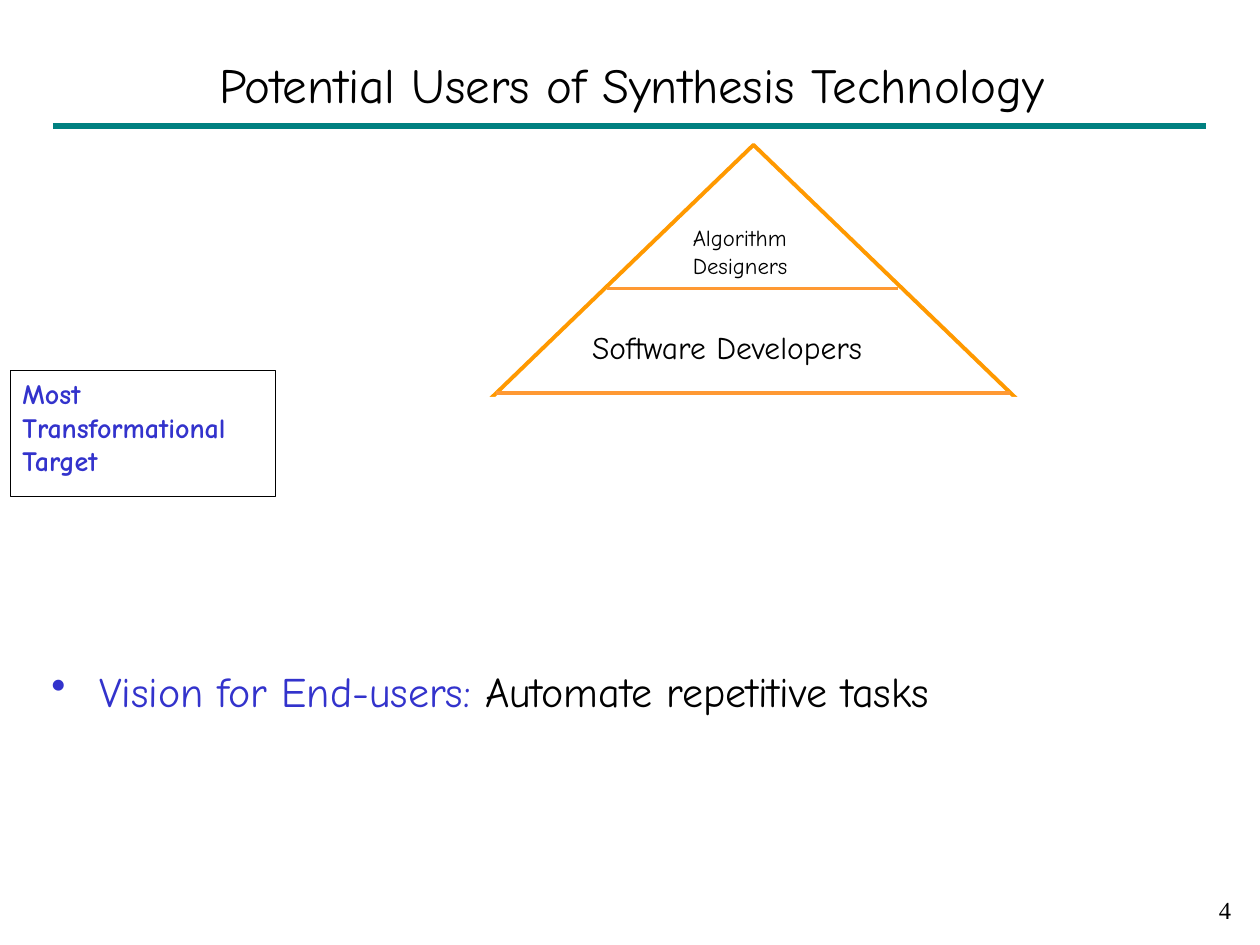
import pptx
import pptx.util
import pptx.dml.color
import pptx.enum.shapes
import pptx.enum.text
import pptx.oxml.ns
import lxml.etree

Inches, Pt = pptx.util.Inches, pptx.util.Pt
RGB = pptx.dml.color.RGBColor
Kind = pptx.enum.shapes.MSO_SHAPE
Align = pptx.enum.text.PP_ALIGN
Anchor = pptx.enum.text.MSO_ANCHOR

BLACK, WHITE = RGB(0, 0, 0), RGB(255, 255, 255)
BLUE, TEAL = RGB(0x33, 0x33, 0xCC), RGB(0, 0x80, 0x80)
AMBER, ORANGE = RGB(0xFF, 0x99, 0), RGB(0xFF, 0x99, 0x33)
FONT, SERIF = "Comic Neue", "Times New Roman"

TITLE = "Potential Users of Synthesis Technology"
VISION = [("Vision for End-users: ", BLUE), ("Automate repetitive tasks", BLACK)]
# box, border, paragraphs, size, colour, bold
LABELS = [
    ((5.4, 1.73, 1.04, 0.65), WHITE, ["Algorithm", "Designers"], 13, BLACK, False),
    ((4.6, 2.51, 2.72, 0.62), WHITE, ["Software Developers"], 18, BLACK, False),
    ((0.08, 2.94, 2.11, 1), BLACK, ["Most Transformational Target"], 16, BLUE, True),
]
# left, right, height, colour, width
RULES = [
    (0.42, 9.57, 1, TEAL, 4),
    (4.82, 7.13, 2.29, ORANGE, 2.25),
    (3.94, 8.02, 3.12, ORANGE, 2.25),
]
PYRAMID = (2.27, 1.15, 7.42, 3.58)
COVERS = [(1.94, 3.97, 7.84, 1.19), (2.2, 3.15, 7.8, 1.19)]


def add_run(para, text, size, color, font=FONT, bold=False):
    run = para.add_run()
    run.text = text
    run.font.size, run.font.name, run.font.bold = Pt(size), font, bold
    run.font.color.rgb = color


def add_block(slide, kind, box, border=None, width=0.5):
    shape = slide.shapes.add_shape(kind, *map(Inches, box))
    shape.shadow.inherit = False
    shape.fill.solid()
    shape.fill.fore_color.rgb = WHITE
    if border is None:
        shape.line.fill.background()
    else:
        shape.line.color.rgb = border
        shape.line.width = Pt(width)
    return shape


def add_label(slide, box, border, lines, size, color, bold):
    frame = add_block(slide, Kind.RECTANGLE, box, border).text_frame
    frame.word_wrap = True
    frame.vertical_anchor = Anchor.TOP
    for i, line in enumerate(lines):
        para = frame.add_paragraph() if i else frame.paragraphs[0]
        para.alignment = Align.LEFT
        add_run(para, line, size, color, bold=bold)
    return frame


def add_rule(slide, left, right, y, color, width):
    rule = slide.shapes.add_connector(
        pptx.enum.shapes.MSO_CONNECTOR.STRAIGHT,
        Inches(left), Inches(y), Inches(right), Inches(y))
    rule.line.color.rgb = color
    rule.line.width = Pt(width)
    props = rule._element.spPr
    lxml.etree.SubElement(props, pptx.oxml.ns.qn("a:effectLst"))


def add_text(slide, box):
    frame = slide.shapes.add_textbox(*map(Inches, box)).text_frame
    frame.word_wrap = True
    return frame.paragraphs[0]


def add_bullet(para, indent):
    props = para._p.get_or_add_pPr()
    props.set("marL", str(Inches(indent)))
    props.set("indent", str(-Inches(indent)))
    mark = lxml.etree.SubElement(props, pptx.oxml.ns.qn("a:buChar"))
    mark.set("char", "•")


def main():
    deck = pptx.Presentation()
    deck.slide_width, deck.slide_height = Inches(10), Inches(7.5)
    slide = deck.slides.add_slide(deck.slide_layouts[5])

    title = slide.shapes.title
    title.left, title.top, title.width, title.height = map(
        Inches, (0.39, 0.33, 9.25, 0.67))
    title.text_frame.vertical_anchor = Anchor.MIDDLE
    para = title.text_frame.paragraphs[0]
    para.alignment = Align.CENTER
    add_run(para, TITLE, 28, BLACK)

    add_block(slide, Kind.ISOSCELES_TRIANGLE, PYRAMID, AMBER, 2.25)
    frames = [add_label(slide, *label) for label in LABELS]
    frames[1].paragraphs[0].line_spacing = 1.15
    frames[1].paragraphs[0].space_after = Pt(10)
    for rule in RULES:
        add_rule(slide, *rule)

    number = add_text(slide, (7.79, 7.05, 2.08, 0.42))
    number.alignment = Align.RIGHT
    add_run(number, "4", 14, BLACK, SERIF)

    vision = add_text(slide, (0.31, 5.23, 9.3, 0.5))
    add_bullet(vision, 0.38)
    for text, color in VISION:
        add_run(vision, text, 24, color)

    # White blocks cut the pyramid off below the developers' tier
    for box in COVERS:
        add_block(slide, Kind.RECTANGLE, box)

    deck.save("out.pptx")


if __name__ == "__main__":
    main()
